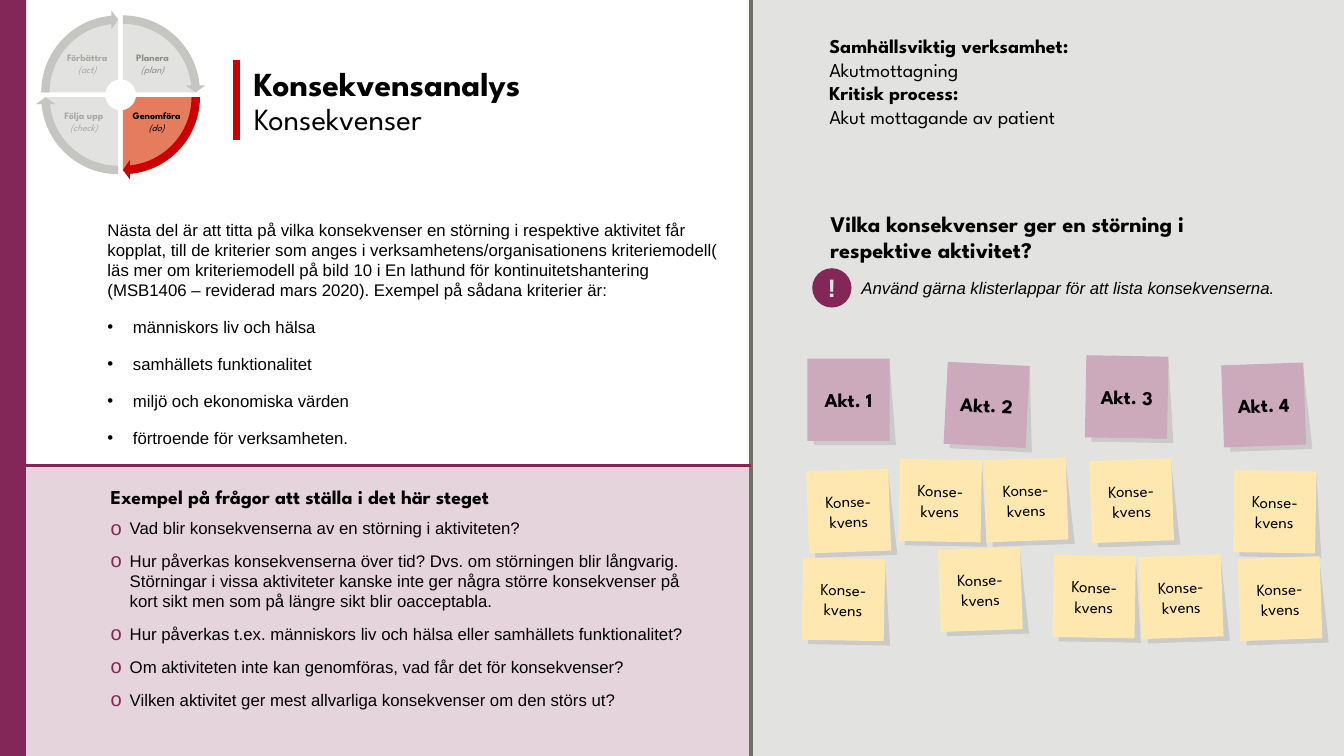
import math
import pptx
import pptx.util
import pptx.dml.color
import pptx.enum.shapes
import pptx.enum.text
from lxml import etree
from pptx.oxml.ns import qn

Cm, Pt = pptx.util.Cm, pptx.util.Pt
RGB = pptx.dml.color.RGBColor
FORM = pptx.enum.shapes.MSO_SHAPE
MID = pptx.enum.text.MSO_ANCHOR.MIDDLE
CENTER = pptx.enum.text.PP_ALIGN.CENTER

BLACK = RGB(0, 0, 0)
PLUM = RGB(0x82, 0x27, 0x57)
PINK = RGB(0xE6, 0xD4, 0xDD)
MAUVE = RGB(0xCD, 0xA9, 0xBC)
CREAM = RGB(0xFE, 0xE8, 0xB0)
RED = RGB(0xCC, 0, 0)
CORAL = RGB(0xE6, 0x7C, 0x5E)
PALE = RGB(0xE2, 0xE2, 0xE1)
SILVER = RGB(0xC5, 0xC5, 0xC2)
MIST = RGB(0xA9, 0xA8, 0xA4)
ASH = RGB(0x8C, 0x8B, 0x85)
STONE = RGB(0x6F, 0x6E, 0x67)
LIGHT = RGB(0xE7, 0xE6, 0xE6)
HEAD, BODY = "League Spartan", "Arial"

# Rows of text: wording, style (b = bold, i = italic), size
TITLE = [("Konsekvensanalys", "b", 24), ("Konsekvenser", "", 22)]
INTRO = ("Nästa del är att titta på vilka konsekvenser en störning i respektive aktivitet får "
         "kopplat, till de kriterier som anges i verksamhetens/organisationens kriteriemodell( "
         "läs mer om kriteriemodell på bild 10 i En lathund för kontinuitetshantering "
         "(MSB1406 – reviderad mars 2020). Exempel på sådana kriterier är:")
POINTS = ["människors liv och hälsa", "samhällets funktionalitet",
          "miljö och ekonomiska värden", "förtroende för verksamheten."]
ASKHEAD = [("Exempel på frågor att ställa i det här steget", "b", 14)]
ASKS = ["Vad blir konsekvenserna av en störning i aktiviteten?",
        "Hur påverkas konsekvenserna över tid? Dvs. om störningen blir långvarig. Störningar i "
        "vissa aktiviteter kanske inte ger några större konsekvenser på kort sikt men som på "
        "längre sikt blir oacceptabla.",
        "Hur påverkas t.ex. människors liv och hälsa eller samhällets funktionalitet?",
        "Om aktiviteten inte kan genomföras, vad får det för konsekvenser?",
        "Vilken aktivitet ger mest allvarliga konsekvenser om den störs ut?"]
SCOPE = [("Samhällsviktig verksamhet:", "b", 14), ("Akutmottagning", "", 14),
         ("Kritisk process:", "b", 14), ("Akut mottagande av patient", "", 14)]
PROMPT = [("Vilka konsekvenser ger en störning i respektive aktivitet?", "b", 16)]
TIP = [("Använd gärna klisterlappar för att lista konsekvenserna.", "i", 12)]

# Sticky notes: left, top, tilt
ACTS = [(20.35, 9.04, 0), (23.83, 9.17, 3), (27.36, 8.97, 1), (30.81, 9.17, -2)]
EFFECTS = [(20.35, 11.84, -2), (20.22, 14.07, 1), (27.48, 11.58, -2), (26.54, 14, 1),
           (28.73, 14, -2), (31.09, 11.86, 1), (31.22, 14.05, -2), (22.66, 11.58, 1),
           (24.82, 11.56, -2), (23.67, 13.82, -2)]
NOTE = 2.07

# Wheel, clockwise from lower right: side x, side y, fill, arrow, word, phase, ink, label box
WHEEL = [(1, 1, CORAL, RED, "Genomföra", "(do)", BLACK, (3, 2.67, 1.9, 0.84)),
         (-1, 1, PALE, SILVER, "Följa upp", "(check)", MIST, (1.3, 2.67, 1.63, 0.84)),
         (-1, -1, PALE, SILVER, "Förbättra", "(act)", MIST, (1.4, 1.22, 1.6, 0.84)),
         (1, -1, PALE, SILVER, "Planera", "(plan)", ASH, (2.92, 1.22, 1.85, 0.84))]
HUB, GAP, INNER, OUTER, REACH = (3.04, 2.39), 0.06, 0.39, 1.87, 2.08


def write(shape, rows, face=HEAD, ink=BLACK, after=0, align=None, lead=None):
    frame = shape.text_frame
    frame.text = "\n".join(row[0] for row in rows)
    for para, (_, style, size) in zip(frame.paragraphs, rows):
        para.space_after = Pt(after)
        if align is not None:
            para.alignment = align
        if lead:
            para.line_spacing = lead
        for run in para.runs:
            font = run.font
            font.name, font.size, font.color.rgb = face, Pt(size), ink
            font.bold, font.italic = "b" in style, "i" in style


def text(home, box, rows, wrap=True, **look):
    shape = home.add_textbox(*map(Cm, box))
    shape.text_frame.word_wrap = wrap
    write(shape, rows, **look)
    return shape


def bullet(para, mark, hang, ink=None, scale=None):
    props = para._p.get_or_add_pPr()
    props.set("marL", str(Cm(hang)))
    props.set("indent", str(-Cm(hang)))
    if ink:
        tint = etree.SubElement(props, qn("a:buClr"))
        etree.SubElement(tint, qn("a:srgbClr")).set("val", str(ink))
    if scale:
        etree.SubElement(props, qn("a:buSzPct")).set("val", str(scale * 1000))
    etree.SubElement(props, qn("a:buFont")).set("typeface", BODY)
    etree.SubElement(props, qn("a:buChar")).set("char", mark)


def paint(shape, fill):
    shape.shadow.inherit = False
    shape.fill.solid()
    shape.fill.fore_color.rgb = fill
    shape.line.fill.background()
    return shape


def block(home, kind, box, fill):
    return paint(home.add_shape(kind, *map(Cm, box)), fill)


def outline(home, spots, fill):
    spots = [(Cm(x), Cm(y)) for x, y in spots]
    pen = home.build_freeform(*spots[0])
    pen.add_line_segments(spots[1:], close=True)
    return paint(pen.convert_to_shape(), fill)


def rule(home, ends, ink, width):
    line = home.add_connector(pptx.enum.shapes.MSO_CONNECTOR.STRAIGHT, *map(Cm, ends))
    line.line.color.rgb, line.line.width = ink, Pt(width)
    etree.SubElement(line._element.spPr, qn("a:effectLst"))


def inset(shape, side, top):
    frame = shape.text_frame
    frame.vertical_anchor = MID
    frame.margin_left = frame.margin_right = Cm(side)
    frame.margin_top = frame.margin_bottom = Cm(top)


def note(home, spot, fill, rows, side):
    """Draw a tilted sticky note with a see-through shade under it."""
    left, top, tilt = spot
    group = home.add_group_shape().shapes
    x, y = left + 0.16, top + 0.11
    shade = outline(group, [(x, y), (x + 1.91, y), (x + NOTE, y + NOTE), (x, y + NOTE)], BLACK)
    color = shade._element.spPr.find(qn("a:solidFill"))[0]
    etree.SubElement(color, qn("a:alpha")).set("val", "10000")
    sheet = block(group, FORM.RECTANGLE, (left, top, NOTE, NOTE), fill)
    inset(sheet, side, 0.13)
    write(sheet, rows, align=CENTER)
    shade.rotation = sheet.rotation = tilt


def arc(mid, radius, sx, sy, first, last):
    turns = [math.radians(first + (last - first) * i / 24) for i in range(25)]
    return [(mid[0] + sx * radius * math.cos(t), mid[1] + sy * radius * math.sin(t))
            for t in turns]


def wheel(home):
    group = home.add_group_shape().shapes
    skip = math.degrees(math.asin(GAP / INNER))
    mids = [(HUB[0] + sx * GAP, HUB[1] + sy * GAP) for sx, sy, *_ in WHEEL]
    for mid, (sx, sy, fill, *_) in zip(mids, WHEEL):
        rim = arc(mid, OUTER, sx, sy, 0, 90)
        outline(group, rim + arc(HUB, INNER, sx, sy, 90 - skip, skip), fill)
    for i, (mid, part) in enumerate(zip(mids, WHEEL)):
        box = (mid[0] - REACH, mid[1] - REACH, 2 * REACH, 2 * REACH)
        arrow = block(group, FORM.CIRCULAR_ARROW, box, part[3])
        for j, value in enumerate((0.051, 3.275, 54 * i + 50.725, 54 * i, 0.059)):
            arrow.adjustments[j] = value
    for *_, word, phase, ink, box in WHEEL:
        text(group, box, [(word, "b", 7), (phase, "i", 7)], wrap=False, ink=ink,
             after=1, align=CENTER, lead=0.9)


deck = pptx.Presentation()
deck.slide_width, deck.slide_height = Cm(33.87), Cm(19.05)
home = deck.slides.add_slide(deck.slide_layouts[6]).shapes

block(home, FORM.RECTANGLE, (0, 0, 0.66, 19.05), PLUM)
block(home, FORM.RECTANGLE, (18.92, 0, 14.95, 19.05), PALE)
text(home, (6.15, 1.57, 10.74, 2.11), TITLE, lead=0.9)
rule(home, (5.97, 1.5, 5.97, 3.53), RED, 5)

intro = text(home, (2.46, 5.41, 15.98, 6.07), [(t, "", 12) for t in [INTRO] + POINTS],
             face=BODY, after=12)
for para in intro.text_frame.paragraphs[1:]:
    bullet(para, "•", 0.64)

block(home, FORM.RECTANGLE, (0.66, 11.76, 18.27, 7.29), PINK)
text(home, (2.54, 12.09, 10.92, 0.86), ASKHEAD, wrap=False)
rule(home, (18.92, 0, 18.92, 19.05), STONE, 2.5)
rule(home, (0.66, 11.73, 18.92, 11.73), PLUM, 2.5)
asks = text(home, (2.54, 12.93, 15.27, 5.13), [(t, "", 12) for t in ASKS], face=BODY, after=9)
for para in asks.text_frame.paragraphs:
    bullet(para, "o", 0.48, PLUM, 120)

text(home, (20.65, 0.74, 10.08, 2.64), SCOPE)
text(home, (20.68, 5.16, 11.18, 1.63), PROMPT)
text(home, (21.46, 6.88, 12.4, 0.76), TIP, face=BODY)
badge = block(home, FORM.OVAL, (20.47, 6.76, 0.99, 0.99), PLUM)
inset(badge, 0, 0)
write(badge, [("!", "b", 18)], face=BODY, ink=LIGHT, align=CENTER)

for spot in EFFECTS:
    note(home, spot, CREAM, [("Konse-", "", 12), ("kvens", "", 12)], 0)
for i, spot in enumerate(ACTS, 1):
    note(home, spot, MAUVE, [(f"Akt. {i}", "b", 14)], 0.25)
wheel(home)

deck.save("out.pptx")
